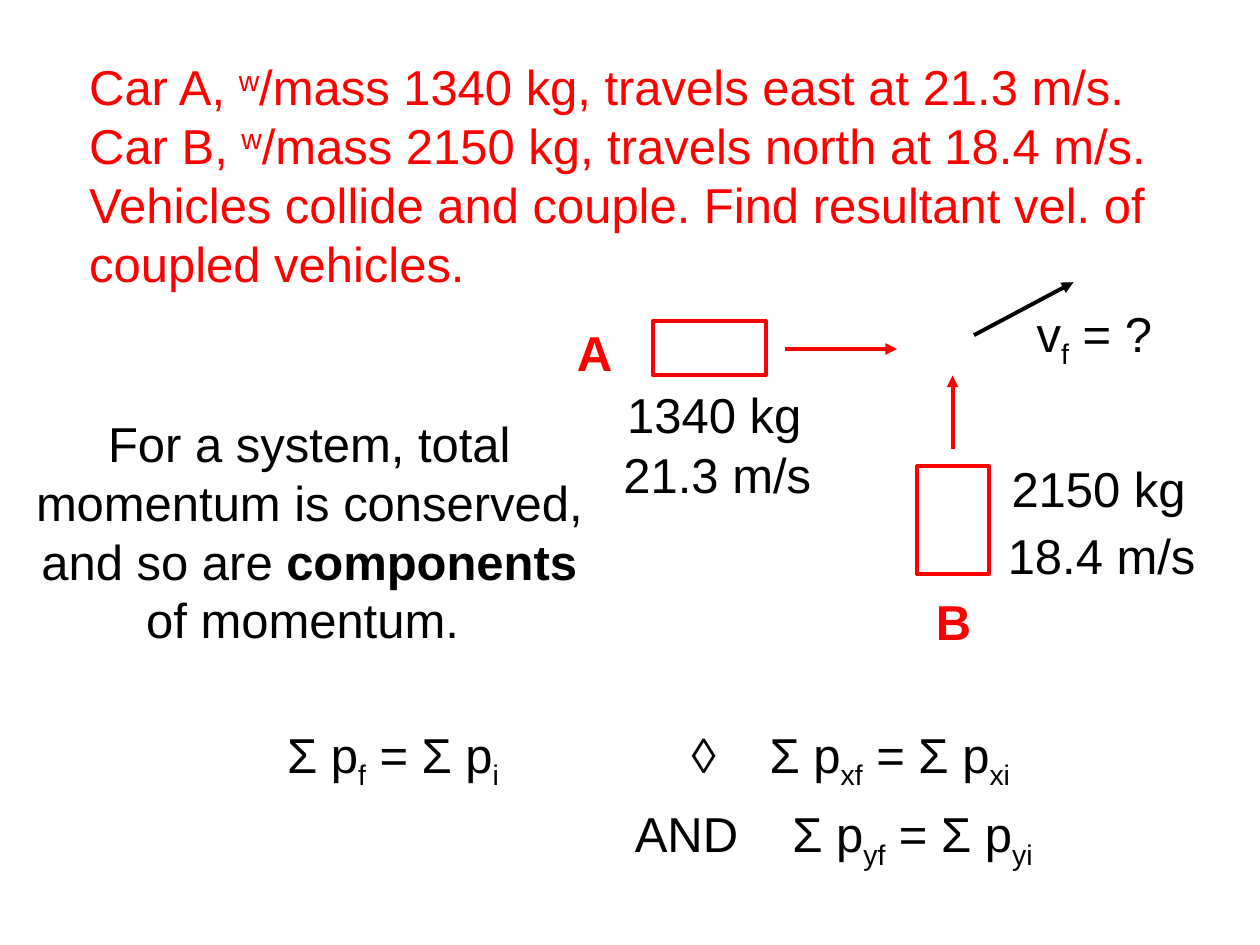
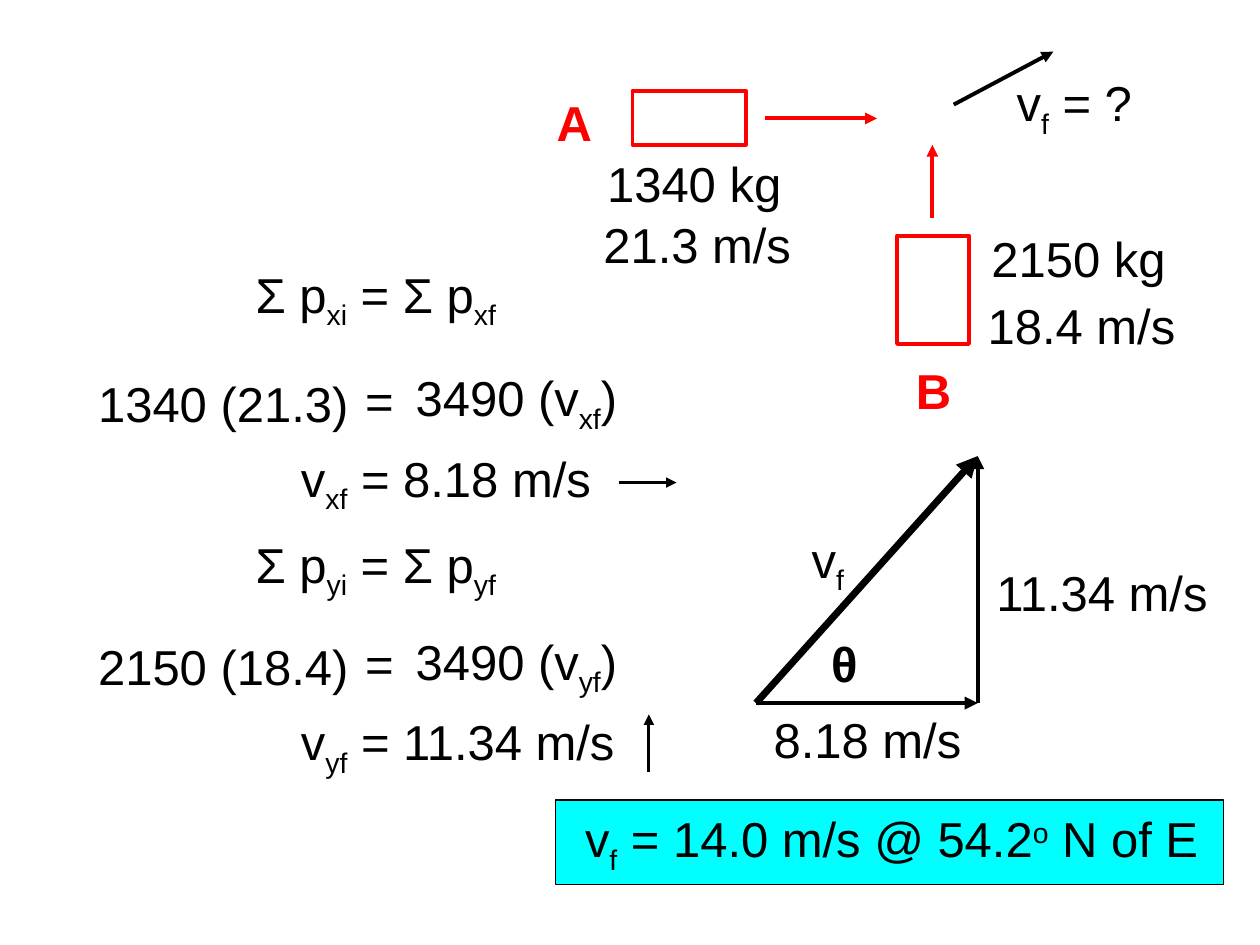
"""Builds two slides on a two-car collision and its momentum components."""
from dataclasses import dataclass

from lxml.etree import SubElement
from pptx import Presentation
from pptx.dml.color import RGBColor
from pptx.enum.shapes import MSO_CONNECTOR, MSO_SHAPE
from pptx.enum.text import MSO_ANCHOR, MSO_AUTO_SIZE, PP_ALIGN
from pptx.oxml.ns import qn
from pptx.util import Inches, Pt


@dataclass(frozen=True)
class Theme:
    red: RGBColor = RGBColor(255, 0, 0)
    black: RGBColor = RGBColor(0, 0, 0)
    cyan: RGBColor = RGBColor(0, 255, 255)
    font: str = "Arial"
    size: Pt = Pt(28)
    row: float = 0.57
    sub: str = "-25000"
    sup: str = "30000"
    edge: float = 2.25


theme = Theme()


def put(slide, text, x, y, w, h=theme.row, color=theme.black, wrap=True,
        align=PP_ALIGN.LEFT, tab=None):
    """Place text; bars split runs, led by _ (low), ^ (high) or * (bold)."""
    box = slide.shapes.add_textbox(Inches(x), Inches(y), Inches(w), Inches(h))
    frame = box.text_frame
    frame.word_wrap = wrap
    frame.auto_size = MSO_AUTO_SIZE.SHAPE_TO_FIT_TEXT
    frame.vertical_anchor = MSO_ANCHOR.MIDDLE
    frame.text = "\n".join([""] * len(text.split("\n")))
    for para, line in zip(frame.paragraphs, text.split("\n")):
        para.alignment = align
        if tab:
            stops = SubElement(para._p.get_or_add_pPr(), qn("a:tabLst"))
            SubElement(stops, qn("a:tab"), pos=str(Inches(tab)), algn="l")
        for part in line.split("|"):
            mark = part[0] if part[0] in "_^*" else ""
            run = para.add_run()
            run.text = part[len(mark):]
            run.font.name = theme.font
            run.font.size = theme.size
            run.font.color.rgb = color
            run.font.bold = mark == "*"
            if mark in ("_", "^"):
                shift = theme.sub if mark == "_" else theme.sup
                run._r.get_or_add_rPr().set("baseline", shift)


def arrow(slide, x, y, endx, endy, color=theme.black, width=theme.edge):
    """Draw a straight arrow that points at its end."""
    line = slide.shapes.add_connector(
        MSO_CONNECTOR.STRAIGHT, Inches(x), Inches(y), Inches(endx), Inches(endy))
    line.line.color.rgb = color
    line.line.width = Pt(width)
    SubElement(line.line._get_or_add_ln(), qn("a:tailEnd"), type="triangle")
    SubElement(line._element.spPr, qn("a:effectLst"))


deck = Presentation()
deck.slide_width, deck.slide_height = Inches(10), Inches(7.5)
setup, solve = [deck.slides.add_slide(deck.slide_layouts[6]) for _ in range(2)]

panel = solve.shapes.add_shape(
    MSO_SHAPE.RECTANGLE, Inches(4.41), Inches(6.35), Inches(5.3), Inches(0.67))
panel.shadow.inherit = False
panel.fill.solid()
panel.fill.fore_color.rgb = theme.cyan
panel.line.color.rgb = theme.black
panel.line.width = Pt(0.75)

for slide, dx, dy in ((setup, 0, 0), (solve, -0.16, -1.83)):
    for x, y, w, h in ((5.18, 2.55, 0.9, 0.43), (7.28, 3.7, 0.57, 0.86)):
        car = slide.shapes.add_shape(
            MSO_SHAPE.RECTANGLE, Inches(x + dx), Inches(y + dy), Inches(w), Inches(h))
        car.shadow.inherit = False
        car.fill.background()
        car.line.color.rgb = theme.red
        car.line.width = Pt(theme.edge)
    for x, y, endx, endy, color in (
            (6.23, 2.77, 7.12, 2.77, theme.red),
            (7.56, 3.56, 7.56, 2.98, theme.red),
            (7.73, 2.66, 8.52, 2.24, theme.black)):
        arrow(slide, x + dx, y + dy, endx + dx, endy + dy, color)
    for text, x, y, w, color in (
            ("*A", 4.48, 2.51, 0.59, theme.red),
            ("*B", 7.33, 4.64, 0.59, theme.red),
            ("1340 kg", 4.88, 3, 1.64, theme.black),
            ("21.3 m/s", 4.85, 3.48, 1.96, theme.black),
            ("2150 kg", 7.93, 3.59, 1.64, theme.black),
            ("18.4 m/s", 7.9, 4.12, 1.84, theme.black),
            ("v|_f| = ?", 8.13, 2.39, 1.3, theme.black)):
        put(slide, text, x + dx, y + dy, w, color=color)

put(setup, "Car A, |^w|/mass 1340 kg, travels east at 21.3 m/s.\n"
    "Car B, |^w|/mass 2150 kg, travels north at 18.4 m/s.\n"
    "Vehicles collide and couple. Find resultant vel. of\n"
    "coupled vehicles.", 0.61, 0.4, 8.74, 1.97, theme.red, False)
put(setup, "For a system, total\nmomentum is conserved,\n"
    "and so are |*components\nof momentum. ",
    0.18, 3.23, 4.55, 1.97, wrap=False, align=PP_ALIGN.CENTER)
put(setup, "Σ p|_f| = Σ p|_i", 2.18, 5.73, 1.9, wrap=False)
put(setup, "◊\tΣ p|_xf| = Σ p|_xi", 5.39, 5.73, 3.1, tab=0.62)
put(setup, "AND\tΣ p|_yf| = Σ p|_yi", 4.94, 6.36, 3.5, tab=1.25)

for axis, start, speed, top, head in (
        ("x", "1340 (21.3)", "8.18", 2.9, 2.08),
        ("y", "2150 (18.4)", "11.34", 4.99, 4.22)):
    put(solve, f"Σ p|_{axis}i| = Σ p|_{axis}f", 1.93, head, 2.22, wrap=False)
    put(solve, start, 0.68, top + 0.01, 2.28)
    put(solve, "=", 2.8, top - 0.01, 0.54)
    put(solve, f"3490 (v|_{axis}f|)", 3.2, top, 2.02)
    put(solve, f"v|_{axis}f| = {speed} m/s", 2.29, top + 0.64, 2.88)

for x, y, endx, endy, width in (
        (4.91, 3.83, 5.37, 3.83, 1.75),
        (5.15, 6.13, 5.15, 5.67, 1.75),
        (7.76, 5.58, 7.76, 3.62, 2.5),
        (6, 5.58, 7.76, 5.58, 2.5),
        (6, 5.58, 7.76, 3.62, 4)):
    arrow(solve, x, y, endx, endy, width=width)

for text, x, y, w in (
        ("11.34 m/s", 7.67, 4.41, 2.15),
        ("8.18 m/s", 5.81, 5.58, 2.15),
        ("*θ", 6.34, 4.98, 0.72),
        ("v|_f", 6.13, 4.18, 0.88)):
    put(solve, text, x, y, w, align=PP_ALIGN.CENTER)
put(solve, "v|_f| = 14.0 m/s @ 54.2|^o| N of E ", 4.52, 6.4, 5.22,
    wrap=False, align=PP_ALIGN.CENTER)

deck.save("out.pptx")
